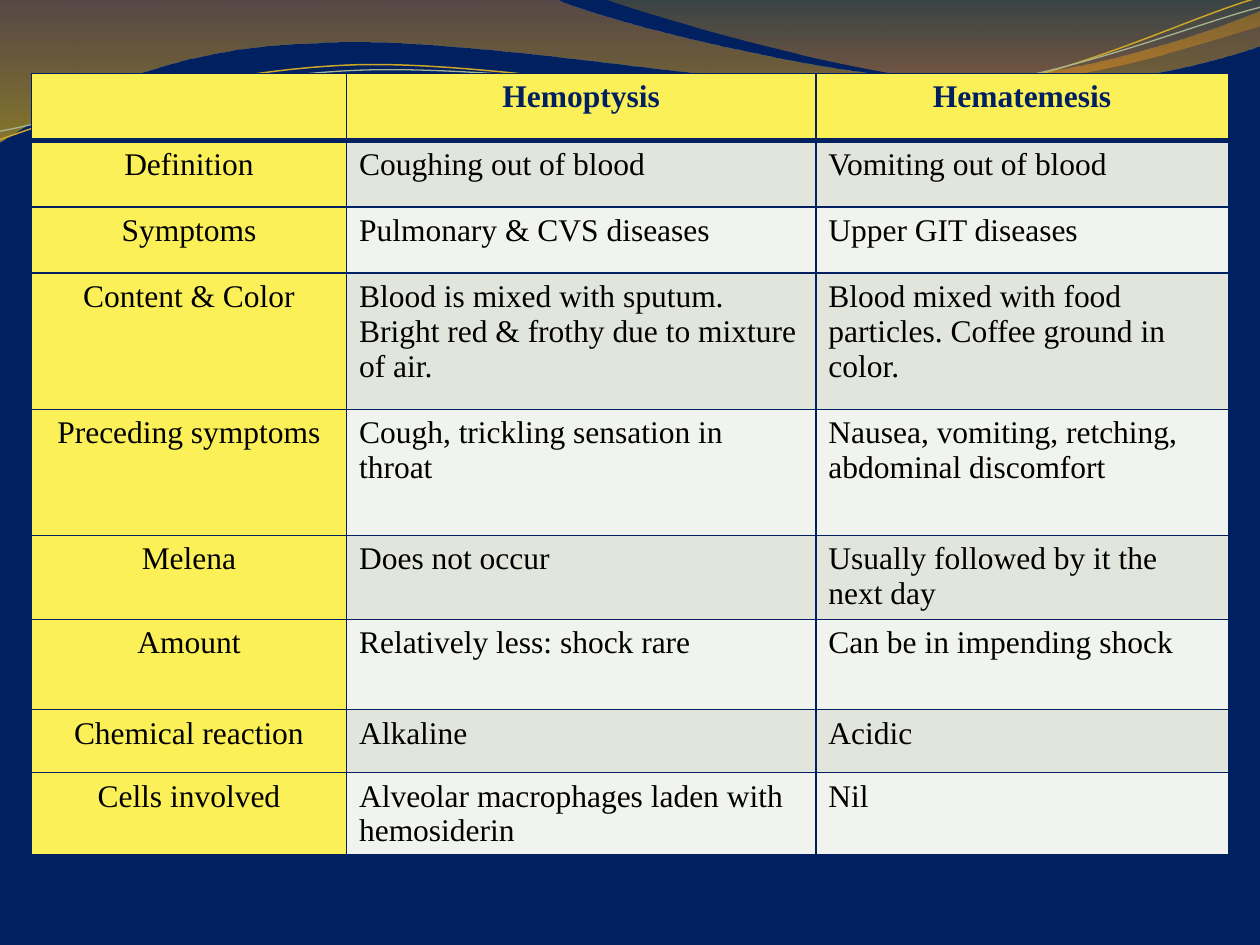
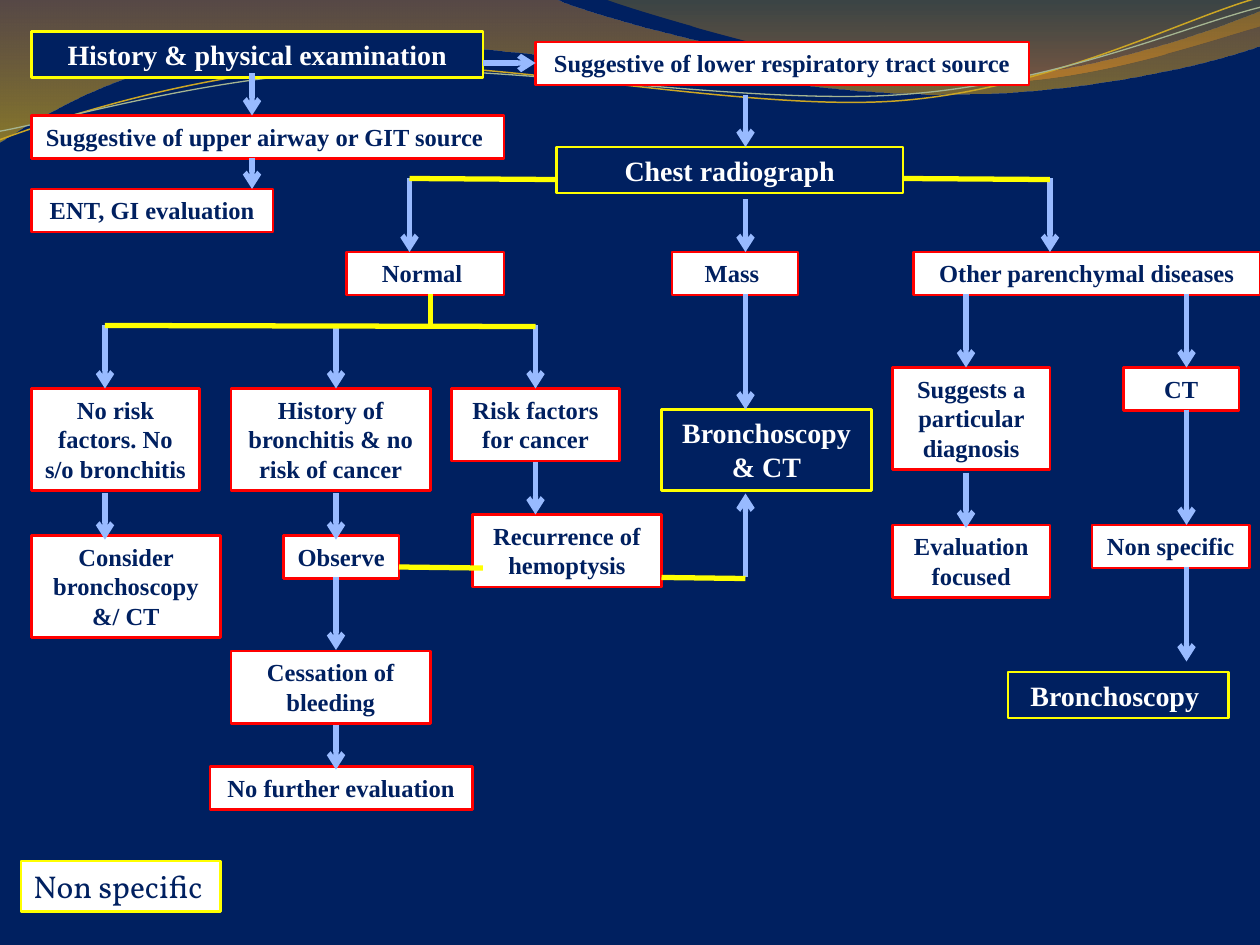
"""Build two slides on hemoptysis: a comparison table and a work-up flowchart."""
from lxml import etree
from pptx import Presentation
from pptx.dml.color import RGBColor
from pptx.enum.shapes import MSO_CONNECTOR, MSO_SHAPE
from pptx.enum.text import MSO_ANCHOR, MSO_AUTO_SIZE, PP_ALIGN
from pptx.oxml.ns import qn
from pptx.util import Pt

PX = 7620
NAVY = RGBColor(0x00, 0x20, 0x60)
WHITE = RGBColor(0xFF, 0xFF, 0xFF)
BLACK = RGBColor(0x00, 0x00, 0x00)
RED = RGBColor(0xFF, 0x00, 0x00)
YELLOW = RGBColor(0xFF, 0xFF, 0x00)
LEMON = RGBColor(0xFC, 0xF0, 0x59)
SAGE = RGBColor(0xE1, 0xE5, 0xDC)
MIST = RGBColor(0xF0, 0xF3, 0xEE)
SKY = RGBColor(0x98, 0xBA, 0xFF)
COPPER = RGBColor(0xC0, 0x7A, 0x28)
AMBER = RGBColor(0xF7, 0xBF, 0x00)
BRONZE = RGBColor(0xC0, 0x97, 0x09)
ORANGE = RGBColor(0xF5, 0x93, 0x20)
GOLD = RGBColor(0xCC, 0xA6, 0x24)
OLIVE = RGBColor(0xA5, 0xB5, 0x92)


def write(frame, text, size=18, color=BLACK, bold=False, align=PP_ALIGN.LEFT,
          font="Times New Roman"):
    frame.word_wrap = True
    paragraph = frame.paragraphs[0]
    paragraph.alignment = align
    run = paragraph.add_run()
    run.text = text
    run.font.name = font
    run.font.size = Pt(size)
    run.font.bold = bold
    run.font.color.rgb = color


def trace(slide, start, steps, close):
    points = [step[i:i + 2] for step in steps for i in range(0, len(step), 2)]
    builder = slide.shapes.build_freeform(*start, scale=PX)
    builder.add_line_segments(points, close=close)
    outline = builder.convert_to_shape()
    outline.shadow.inherit = False
    segments = iter(list(outline.element.iter(qn("a:lnTo"))))
    for step in steps:
        segment = next(segments)
        if len(step) == 6:
            curve = etree.Element(qn("a:cubicBezTo"))
            segment.addprevious(curve)
            for part in (segment, next(segments), next(segments)):
                curve.append(part[0])
                part.getparent().remove(part)
    return outline


waves = [
    ((0, 0), [(528, -1), (571, 20, 797, 76, 910, 76), (1024, 76, 1150, 31, 1200, 11),
              (1201, 43), (1180, 53, 1044, 91, 895, 90), (746, 90, 458, 34, 308, 41),
              (155, 43, 55, 100, -1, 136)],
     [(0, COPPER, 45), (1, AMBER, 55)]),
    ((575, -1), [(611, 13, 818, 74, 923, 78), (1027, 83, 1153, 38, 1200, 25), (1200, 0)],
     [(0, BRONZE, 30), (0.8, ORANGE, 45)]),
]
strands = [
    ((0, 133), [(58, 112, 190, 68, 332, 62), (474, 56, 712, 107, 856, 96),
                (1000, 85, 1126, 18, 1198, -2)], GOLD, 0.85),
    ((0, 125), [(56, 115, 197, 73, 340, 67), (484, 61, 716, 101, 860, 90),
                (1003, 80, 1129, 25, 1200, 7)], OLIVE, 0.75),
]

prs = Presentation()
prs.slide_width, prs.slide_height = 1200 * PX, 900 * PX
background = prs.slide_master.background.fill
background.solid()
background.fore_color.rgb = NAVY
comparison, workup = [prs.slides.add_slide(prs.slide_layouts[6]) for _ in range(2)]

for start, steps, stops in waves:
    wave = trace(comparison, start, steps, True)
    wave.line.fill.background()
    wave.fill.gradient()
    wave.fill.gradient_angle = 270
    for stop, (position, color, _) in zip(wave.fill.gradient_stops, stops):
        stop.position = position
        stop.color.rgb = color
    tints = list(wave.element.spPr.iter(qn("a:srgbClr")))
    for tint, (_, _, opacity) in zip(tints, stops):
        etree.SubElement(tint, qn("a:alpha"), val=str(opacity * 1000))
for start, steps, color, width in strands:
    strand = trace(comparison, start, steps, False)
    strand.fill.background()
    strand.line.color.rgb = color
    strand.line.width = Pt(width)
for number, ribbon in enumerate(list(comparison.shapes), 20):
    ribbon.element.nvSpPr.cNvPr.set("id", str(number))
    prs.slide_master.shapes.element.append(ribbon.element)

features = [
    ("", "Hemoptysis", "Hematemesis"),
    ("Definition", "Coughing out of blood", "Vomiting out of blood"),
    ("Symptoms", "Pulmonary & CVS diseases", "Upper GIT diseases"),
    ("Content & Color",
     "Blood is mixed with sputum. Bright red & frothy due to mixture of air.",
     "Blood mixed with food particles. Coffee ground in color."),
    ("Preceding symptoms", "Cough, trickling sensation in throat",
     "Nausea, vomiting, retching, abdominal discomfort"),
    ("Melena", "Does not occur", "Usually followed by it the next day"),
    ("Amount", "Relatively less: shock rare", "Can be in impending shock"),
    ("Chemical reaction", "Alkaline", "Acidic"),
    ("Cells involved", "Alveolar macrophages laden with hemosiderin", "Nil"),
]
column_widths = [300, 447, 393]
row_heights = [64, 63, 63, 130, 120, 80, 86, 60, 78]
table = comparison.shapes.add_table(
    len(features), 3, 30 * PX, 70 * PX, sum(column_widths) * PX, sum(row_heights) * PX).table
table.first_row = table.horz_banding = False
for column, width in zip(table.columns, column_widths):
    column.width = width * PX
for r, (feature, height) in enumerate(zip(features, row_heights)):
    table.rows[r].height = height * PX
    for c, text in enumerate(feature):
        cell = table.cell(r, c)
        heading = r == 0 or c == 0
        for side in ("L", "R", "T", "B"):
            thick = (r, side) in ((0, "B"), (1, "T"))
            border = etree.SubElement(cell._tc.get_or_add_tcPr(), qn("a:ln" + side),
                                      w=str(Pt(3 if thick else 1)))
            ink = etree.SubElement(border, qn("a:solidFill"))
            etree.SubElement(ink, qn("a:srgbClr"), val=str(NAVY))
        cell.fill.solid()
        cell.fill.fore_color.rgb = LEMON if heading else SAGE if r % 2 else MIST
        if text:
            write(cell.text_frame, text, bold=r == 0, color=NAVY if r == 0 else BLACK,
                  align=PP_ALIGN.CENTER if heading else PP_ALIGN.LEFT)

finding = dict(size=14, color=NAVY, bold=True, align=PP_ALIGN.CENTER)
milestone = dict(size=16, color=WHITE, bold=True, align=PP_ALIGN.CENTER)
remark = dict(size=18, color=NAVY, font="Vollkorn")
steps_by_kind = [
    (finding, WHITE, RED, (41, 69, 97), [
        ("Mass ", 640, 240, 120, 1),
        ("Suggestive of upper airway or GIT source ", 30, 110, 450, 1),
        ("Suggestive of lower respiratory tract source", 510, 40, 470, 1),
        ("Normal ", 330, 240, 150, 1),
        ("Other parenchymal diseases", 870, 240, 330, 1),
        ("CT", 1070, 350, 110, 1),
        ("Suggests a particular diagnosis", 850, 350, 150, 3),
        ("Evaluation focused", 850, 500, 150, 2),
        ("No risk factors. No s/o bronchitis", 30, 370, 160, 3),
        ("History of bronchitis & no risk of cancer", 220, 370, 190, 3),
        ("Consider bronchoscopy &/ CT", 30, 510, 180, 3),
        ("Observe ", 270, 510, 110, 1),
        ("Cessation of bleeding", 220, 620, 190, 2),
        ("No further evaluation", 200, 730, 250, 1),
        ("Recurrence of hemoptysis", 450, 490, 180, 2),
        ("Risk factors for cancer", 430, 370, 160, 2),
        ("ENT, GI evaluation", 30, 180, 230, 1),
        ("Non specific", 1040, 500, 150, 1),
    ]),
    (milestone, NAVY, YELLOW, (44, 77), [
        ("Chest radiograph", 530, 140, 330, 1),
        ("History & physical examination", 30, 30, 430, 1),
        ("Bronchoscopy ", 960, 640, 210, 1),
        ("Bronchoscopy & CT", 630, 390, 200, 2),
    ]),
    (remark, WHITE, YELLOW, (48,), [("Non specific", 20, 820, 190, 1)]),
]
for style, fill, edge, heights, steps in steps_by_kind:
    for text, left, top, width, lines in steps:
        step = workup.shapes.add_shape(MSO_SHAPE.RECTANGLE, left * PX, top * PX,
                                       width * PX, heights[lines - 1] * PX)
        step.shadow.inherit = False
        step.fill.solid()
        step.fill.fore_color.rgb = fill
        step.line.color.rgb = edge
        step.line.width = Pt(1.5)
        step.text_frame.vertical_anchor = MSO_ANCHOR.TOP
        step.text_frame.auto_size = MSO_AUTO_SIZE.SHAPE_TO_FIT_TEXT
        write(step.text_frame, text, **style)

arrows = [(460, 60, 510, 60)] + [(x, start, x, tip) for x, start, tip in [
    (240, 70, 110), (240, 150, 180), (710, 90, 140), (710, 190, 240),
    (1000, 170, 240), (390, 170, 240), (100, 310, 370), (320, 310, 370),
    (510, 310, 370), (710, 280, 390), (920, 280, 350), (1130, 280, 350),
    (100, 470, 514), (320, 470, 514), (510, 440, 490), (320, 550, 619),
    (320, 690, 733), (920, 450, 503), (1130, 390, 500), (1130, 540, 630),
    (710, 550, 470)]]
branches = [
    (390, 170, 530, 171), (860, 170, 1000, 171), (100, 310, 510, 311),
    (410, 280, 410, 310), (630, 550, 710, 551), (380, 540, 460, 541)]
for color, links in ((SKY, arrows), (YELLOW, branches)):
    for ends in links:
        link = workup.shapes.add_connector(MSO_CONNECTOR.STRAIGHT, *[end * PX for end in ends])
        link.line.color.rgb = color
        link.line.width = Pt(3)
        properties = link.element.spPr
        if links is arrows:
            etree.SubElement(properties.find(qn("a:ln")), qn("a:tailEnd"), type="arrow")
        etree.SubElement(properties, qn("a:effectLst"))

prs.save("out.pptx")
